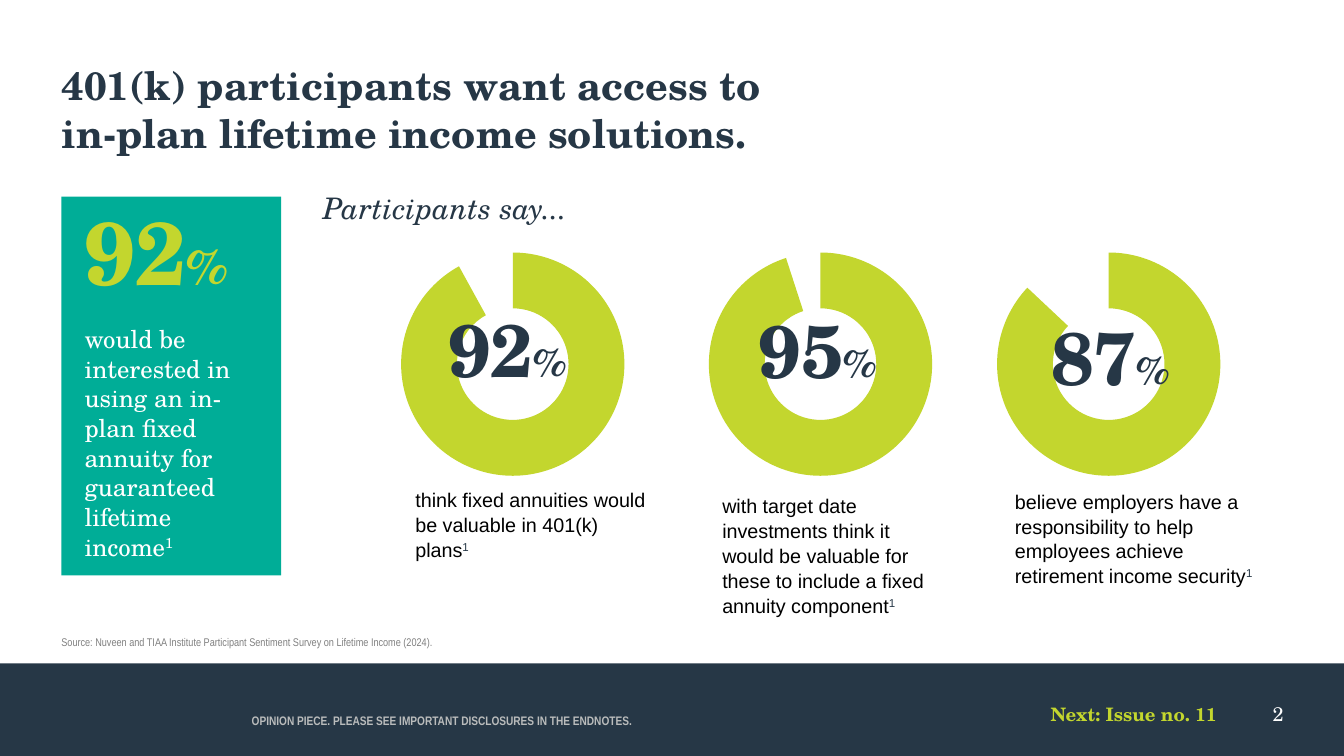
"""Build the slide on what 401(k) participants want from lifetime income."""
import pptx
import pptx.chart.data
import pptx.dml.color
import pptx.enum.chart
import pptx.enum.shapes
import pptx.enum.text
import pptx.oxml
import pptx.oxml.ns
import pptx.util

PX = 9144
SERIF, SANS, NARROW = "TeX Gyre Schola", "Arial", "Arial Narrow"
NAVY, LIME, TEAL, WHITE = "263746", "C3D62E", "00AD97", "FFFFFF"
ALIGN = pptx.enum.text.PP_ALIGN
ANCHOR = pptx.enum.text.MSO_ANCHOR


def rgb(color):
    return pptx.dml.color.RGBColor.from_string(color)


def write(shape, box, text, size, name, color, bold=False, italic=False,
          align=ALIGN.LEFT, anchor=ANCHOR.TOP, after=0):
    shape.left, shape.top, shape.width, shape.height = [value * PX for value in box]
    frame = shape.text_frame
    frame.word_wrap = True
    frame.auto_size = pptx.enum.text.MSO_AUTO_SIZE.NONE
    frame.vertical_anchor = anchor
    frame.margin_left = frame.margin_top = frame.margin_right = frame.margin_bottom = 0
    frame.text = text
    paragraph = frame.paragraphs[0]
    paragraph.alignment = align
    paragraph.space_after = pptx.util.Pt(after)
    font = paragraph.font
    font.size, font.name, font.bold, font.italic = pptx.util.Pt(size), name, bold, italic
    font.color.rgb = rgb(color)
    return paragraph


presentation = pptx.Presentation()
presentation.slide_width, presentation.slide_height = 1511 * PX, 850 * PX
slide = presentation.slides.add_slide(presentation.slide_layouts[5])
shapes = slide.shapes

write(shapes.title, (69, 69, 1374, 113),
      "401(k) participants want access to\vin-plan lifetime income solutions.",
      32, SERIF, NAVY, bold=True)

for box, color in [((0, 746, 1511, 104), NAVY), ((69, 221, 247, 426), TEAL)]:
    panel = shapes.add_shape(pptx.enum.shapes.MSO_SHAPE.RECTANGLE,
                             *[value * PX for value in box])
    panel.shadow.inherit = False
    panel.fill.solid()
    panel.fill.fore_color.rgb = rgb(color)
    panel.line.fill.background()

for box, text, size, name, color, options in [
    ((1403, 789, 40, 33), "2", 16, SERIF, WHITE, {"align": ALIGN.RIGHT}),
    ((283, 776, 450, 42), "OPINION PIECE. PLEASE SEE IMPORTANT DISCLOSURES IN THE ENDNOTES.",
     10, NARROW, "BABCBC", {"bold": True, "anchor": ANCHOR.BOTTOM, "after": 4.3}),
    ((750, 790, 618, 42), "Next: Issue no. 11", 15, SERIF, LIME,
     {"bold": True, "align": ALIGN.RIGHT}),
    ((69, 688, 1374, 41),
     "Source: Nuveen and TIAA Institute Participant Sentiment Survey on Lifetime Income (2024).",
     9, NARROW, "808080", {"anchor": ANCHOR.BOTTOM}),
    ((363, 213, 433, 67), "Participants say...", 24, SERIF, NAVY, {"italic": True, "after": 6}),
]:
    write(shapes.add_textbox(0, 0, 0, 0), box, text, size, name, color, **options)

for left, share in [(367, 92), (713, 95), (1037, 87)]:
    data = pptx.chart.data.CategoryChartData()
    data.categories = ["1", "2"]
    data.add_series("Series 1", [share, 100 - share])
    chart = shapes.add_chart(pptx.enum.chart.XL_CHART_TYPE.DOUGHNUT,
                             left * PX, 270 * PX, 419 * PX, 279 * PX, data).chart
    chart.has_legend = chart.has_title = False
    chart.font.size, chart.font.name = pptx.util.Pt(10), SERIF
    chart.font.color.rgb = rgb("000000")
    plot = chart.plots[0]
    plot.vary_by_categories = False
    answered, remainder = [plot.series[0].points[index].format for index in range(2)]
    answered.fill.solid()
    answered.fill.fore_color.rgb = rgb(LIME)
    answered.line.fill.background()
    remainder.fill.background()
    remainder.line.fill.background()
    plot_area = chart._chartSpace.chart.plotArea
    plot_area.find(".//" + pptx.oxml.ns.qn("c:holeSize")).set("val", "65")
    for layout in plot_area.findall(pptx.oxml.ns.qn("c:layout")):
        plot_area.remove(layout)
    plot_area.insert(0, pptx.oxml.parse_xml(
        f'<c:layout {pptx.oxml.ns.nsdecls("c")}><c:manualLayout>'
        '<c:layoutTarget val="inner"/><c:xMode val="edge"/><c:yMode val="edge"/>'
        '<c:x val="0.2"/><c:y val="0.05"/><c:w val="0.6"/><c:h val="0.9"/>'
        '</c:manualLayout></c:layout>'))

for box, number, size, percent_size, color in [
    ((95, 221, 203, 200), "92", 72, 40, LIME),
    ((504, 341, 159, 186), "92", 60, 32, NAVY),
    ((853, 342, 159, 186), "95", 60, 32, NAVY),
    ((1182, 350, 159, 186), "87", 60, 32, NAVY),
]:
    paragraph = write(shapes.add_textbox(0, 0, 0, 0), box, number, size, SERIF, color,
                      bold=True, after=6)
    percent = paragraph.add_run()
    percent.text = "%"
    percent.font.size = pptx.util.Pt(percent_size)

for box, text, size, name, color, note_color, spacing in [
    ((95, 364, 202, 261), "would be interested in using an in-plan fixed annuity for "
     "guaranteed lifetime income", 20, SERIF, WHITE, WHITE, 1.0),
    ((467, 547, 267, 100), "think fixed annuities would be valuable in 401(k) plans",
     16, SANS, "000000", NAVY, 1.05),
    ((812, 554, 228, 127), "with target date investments think it would be valuable for "
     "these to include a fixed annuity component", 16, SANS, "000000", NAVY, 1.05),
    ((1141, 549, 281, 179), "believe employers have a responsibility to help employees "
     "achieve retirement income security", 16, SANS, "000000", NAVY, 1.05),
]:
    paragraph = write(shapes.add_textbox(0, 0, 0, 0), box, text, size, name, color)
    paragraph.line_spacing = spacing
    note = paragraph.add_run()
    note.text = "1"
    note.font.color.rgb = rgb(note_color)
    note._r.get_or_add_rPr().set("baseline", "30000")

presentation.save("out.pptx")
